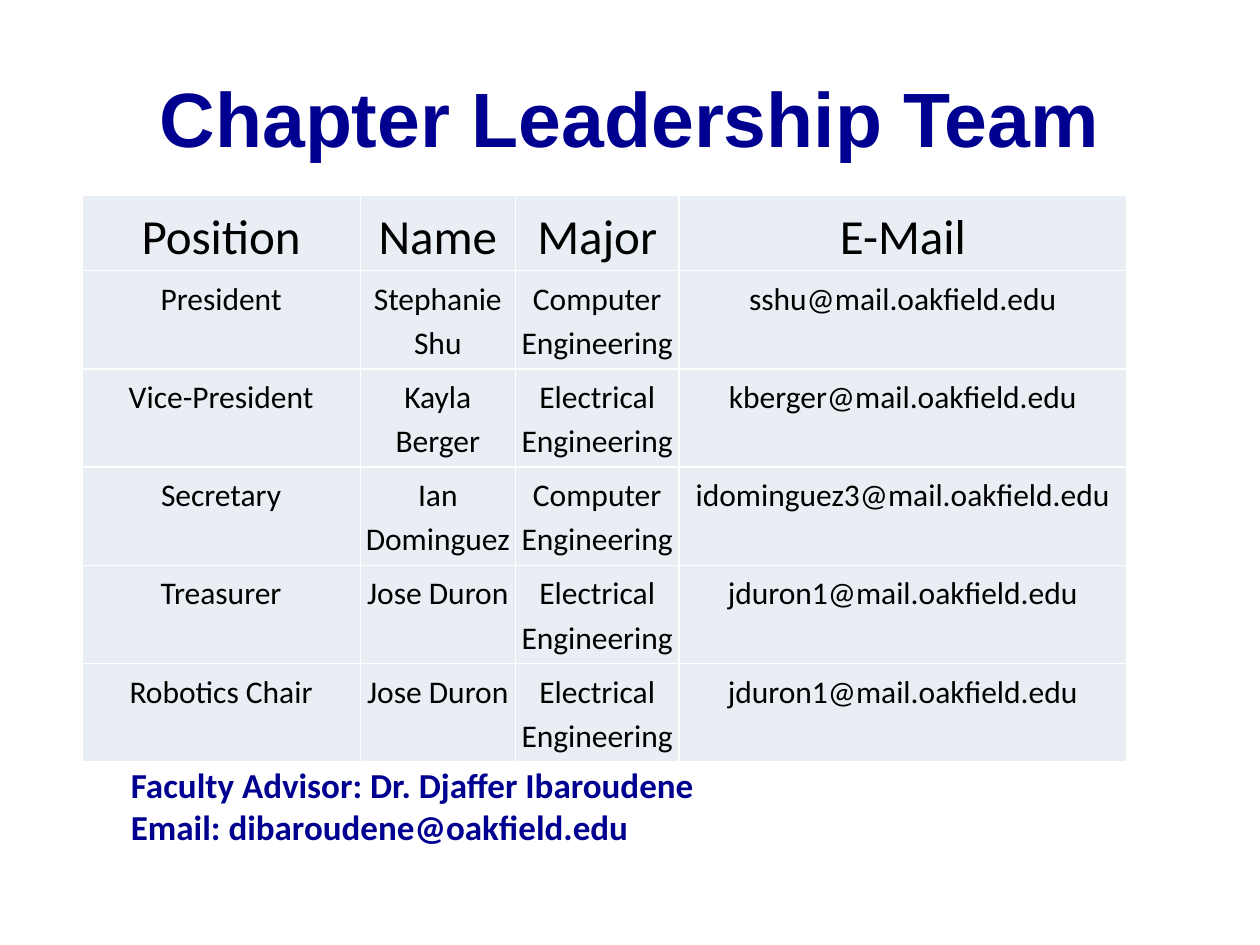
from lxml import etree
from pptx import Presentation
from pptx.dml.color import RGBColor
from pptx.enum.text import MSO_ANCHOR, PP_ALIGN
from pptx.oxml.ns import qn
from pptx.util import Inches, Pt

CENTER = PP_ALIGN.CENTER
LEFT = PP_ALIGN.LEFT
TOP = MSO_ANCHOR.TOP
MIDDLE = MSO_ANCHOR.MIDDLE

NAVY = RGBColor(0x00, 0x00, 0x90)
BLACK = RGBColor(0x00, 0x00, 0x00)
WHITE = RGBColor(0xFF, 0xFF, 0xFF)
PALE_BLUE = RGBColor(0xE9, 0xED, 0xF4)

HEADINGS = ("Position", "Name", "Major", "E-Mail")
OFFICERS = (
    ("President", "Stephanie Shu", "Computer Engineering", "sshu@mail.oakfield.edu"),
    ("Vice-President", "Kayla Berger", "Electrical\nEngineering", "kberger@mail.oakfield.edu"),
    ("Secretary", "Ian Dominguez", "Computer Engineering", "idominguez3@mail.oakfield.edu"),
    ("Treasurer", "Jose Duron", "Electrical Engineering", "jduron1@mail.oakfield.edu"),
    ("Robotics Chair", "Jose Duron", "Electrical Engineering", "jduron1@mail.oakfield.edu"),
)
COLUMN_WIDTHS = (2.21, 1.23, 1.3, 3.55)
HEADING_HEIGHT = 0.42
OFFICER_HEIGHT = 0.78
CELL_MARGIN = Inches(0.03)


def style_text(frame, size, font, color, bold=False, align=LEFT, spacing=None):
    for paragraph in frame.paragraphs:
        paragraph.alignment = align
        paragraph.line_spacing = spacing
        for run in paragraph.runs:
            run.font.size = Pt(size)
            run.font.name = font
            run.font.bold = bold
            run.font.color.rgb = color


def add_text(slide, box, text, anchor, **style):
    frame = slide.shapes.add_textbox(*map(Inches, box)).text_frame
    frame.word_wrap = True
    frame.vertical_anchor = anchor
    frame.text = text
    style_text(frame, color=NAVY, bold=True, **style)


def add_borders(cell, color, width):
    """Draw a solid line on all four sides; the lines must precede the fill."""
    properties = cell._tc.get_or_add_tcPr()
    for position, side in enumerate(("lnL", "lnR", "lnT", "lnB")):
        line = etree.Element(qn(f"a:{side}"), w=str(Pt(width)))
        fill = etree.SubElement(line, qn("a:solidFill"))
        etree.SubElement(fill, qn("a:srgbClr"), val=str(color))
        properties.insert(position, line)


def fill_cell(cell, text, size):
    cell.margin_left = cell.margin_right = CELL_MARGIN
    cell.margin_top = cell.margin_bottom = CELL_MARGIN
    cell.fill.solid()
    cell.fill.fore_color.rgb = PALE_BLUE
    add_borders(cell, WHITE, 1)
    cell.text_frame.text = text
    style_text(cell.text_frame, size, "Calibri", BLACK, align=CENTER, spacing=1.15)


def add_leadership_table(slide, left, top):
    rows = (HEADINGS, *OFFICERS)
    heights = [HEADING_HEIGHT] + [OFFICER_HEIGHT] * len(OFFICERS)
    table = slide.shapes.add_table(
        len(rows), len(HEADINGS), Inches(left), Inches(top),
        Inches(sum(COLUMN_WIDTHS)), Inches(sum(heights)),
    ).table
    table.first_row = False
    table.horz_banding = False
    for column, width in zip(table.columns, COLUMN_WIDTHS):
        column.width = Inches(width)
    for r, (values, height) in enumerate(zip(rows, heights)):
        table.rows[r].height = Inches(height)
        for c, value in enumerate(values):
            fill_cell(table.cell(r, c), value, 28 if r == 0 else 18)


def main():
    prs = Presentation()
    prs.slide_width = Inches(10)
    prs.slide_height = Inches(7.5)
    slide = prs.slides.add_slide(prs.slide_layouts[6])

    add_text(slide, (0.5, 0.3, 9, 1.25), "Chapter Leadership Team", MIDDLE,
             size=44, font="Arial", align=CENTER)
    add_text(slide, (0.94, 6.01, 7.89, 0.77),
             "Faculty Advisor: Dr. Djaffer Ibaroudene\nEmail: dibaroudene@oakfield.edu",
             TOP, size=20, font="Calibri")
    add_leadership_table(slide, 0.65, 1.55)

    prs.save("out.pptx")


if __name__ == "__main__":
    main()
